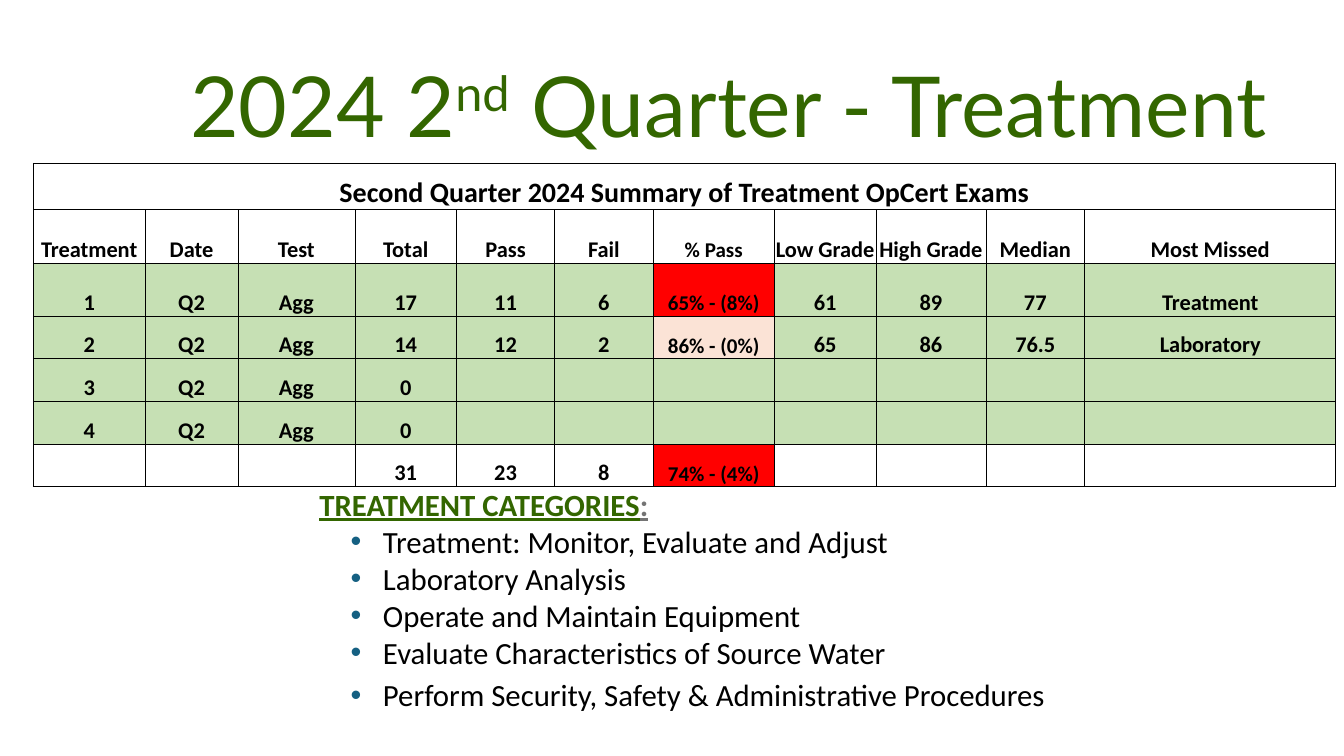
"""Build the 2024 second quarter treatment exam summary slide."""
from lxml.etree import SubElement
from pptx import Presentation
from pptx.dml.color import RGBColor
from pptx.enum.text import MSO_ANCHOR as Anchor, PP_ALIGN as Align
from pptx.oxml import parse_xml
from pptx.oxml.ns import nsdecls, qn
from pptx.util import Inches, Pt

GREEN, BLACK, PALE_GREEN, RED = "336600", "000000", "C6E0B4", "FF0000"


def color(value):
    return RGBColor.from_string(value)


def style(run, font, size, ink, bold=False):
    run.font.name = font
    run.font.size = Pt(size)
    run.font.bold = bold
    run.font.color.rgb = color(ink)


deck = Presentation()
deck.slide_width, deck.slide_height = Inches(13.33), Inches(7.5)
slide = deck.slides.add_slide(deck.slide_layouts[6])

title = slide.shapes.add_textbox(Inches(1.36), Inches(0.49), Inches(11.73), Inches(1.1)).text_frame
title.word_wrap = True
title.vertical_anchor = Anchor.BOTTOM
headline = title.paragraphs[0]
headline.alignment = Align.CENTER
headline.line_spacing = 0.9
for part in ("2024 2", "nd", " Quarter - Treatment"):
    run = headline.add_run()
    run.text = part
    style(run, "Lato", 60, GREEN)
    if part == "nd":
        run._r.get_or_add_rPr().set("baseline", "30000")

categories = slide.shapes.add_textbox(Inches(3.07), Inches(4.77), Inches(7.88), Inches(2.75)).text_frame
categories.word_wrap = True
heading = categories.paragraphs[0]
for part, ink in (("TREATMENT CATEGORIES", GREEN), (":", "747474")):
    run = heading.add_run()
    run.text = part
    style(run, "Calibri", 22, ink, bold=True)
    run.font.underline = True

topics = [
    "Treatment: Monitor, Evaluate and Adjust",
    "Laboratory Analysis",
    "Operate and Maintain Equipment",
    "Evaluate Characteristics of Source Water",
    "Perform Security, Safety & Administrative Procedures",
]
for topic in topics:
    item = categories.add_paragraph()
    item.text = topic
    style(item.runs[0], "Calibri", 22, BLACK)
    layout = item._p.get_or_add_pPr()
    layout.set("marL", str(Inches(0.63)))
    layout.set("indent", str(Inches(-0.32)))
    SubElement(SubElement(layout, qn("a:buClr")), qn("a:srgbClr"), val="156082")
    SubElement(layout, qn("a:buFont"), typeface="Arial")
    SubElement(layout, qn("a:buChar"), char="•")
item.space_before = Pt(4)

results = [
    ["Second Quarter 2024 Summary of Treatment OpCert Exams"] + [""] * 10,
    ["Treatment", "Date", "Test", "Total", "Pass", "Fail", "% Pass",
     "Low Grade", "High Grade", "Median", "Most Missed"],
    ["1", "Q2", "Agg", "17", "11", "6", "65% - (8%)", "61", "89", "77", "Treatment"],
    ["2", "Q2", "Agg", "14", "12", "2", "86% - (0%)", "65", "86", "76.5", "Laboratory"],
    ["3", "Q2", "Agg", "0"] + [""] * 7,
    ["4", "Q2", "Agg", "0"] + [""] * 7,
    ["", "", "", "31", "23", "8", "74% - (4%)"] + [""] * 4,
]
widths = [1.11, 0.92, 1.16, 1.01, 0.97, 0.98, 1.2, 1.01, 1.09, 0.98, 2.49]
heights = [0.46, 0.53, 0.53, 0.42, 0.42, 0.43, 0.42]
PASS_RATE = 6
pass_rate_fills = {2: RED, 3: "FBE3D6", 6: RED}

exams = slide.shapes.add_table(
    len(heights), len(widths), Inches(0.33), Inches(1.62),
    Inches(sum(widths)), Inches(sum(heights))).table
exams.first_row = exams.horz_banding = False
for column, width in zip(exams.columns, widths):
    column.width = Inches(width)
for row, height in zip(exams.rows, heights):
    row.height = Inches(height)

for r, values in enumerate(results):
    for c, value in enumerate(values):
        cell = exams.cell(r, c)
        cell.margin_left = cell.margin_right = cell.margin_top = cell.margin_bottom = 0
        cell.vertical_anchor = Anchor.BOTTOM
        for side in ("lnL", "lnR", "lnT", "lnB"):
            cell._tc.get_or_add_tcPr().append(parse_xml(
                f'<a:{side} {nsdecls("a")} w="{Pt(0.5)}"><a:solidFill>'
                f'<a:srgbClr val="{BLACK}"/></a:solidFill></a:{side}>'))
        fill = PALE_GREEN if 2 <= r <= 5 else None
        if c == PASS_RATE:
            fill = pass_rate_fills.get(r, fill)
        if fill:
            cell.fill.solid()
            cell.fill.fore_color.rgb = color(fill)
        else:
            cell.fill.background()
        if value:
            entry = cell.text_frame.paragraphs[0]
            entry.text = value
            entry.alignment = Align.CENTER
            size = 20 if r == 0 else 15 if c == PASS_RATE else 16
            style(entry.runs[0], "Calibri", size, BLACK, bold=True)
exams.cell(0, 0).merge(exams.cell(0, len(widths) - 1))

deck.save("out.pptx")
